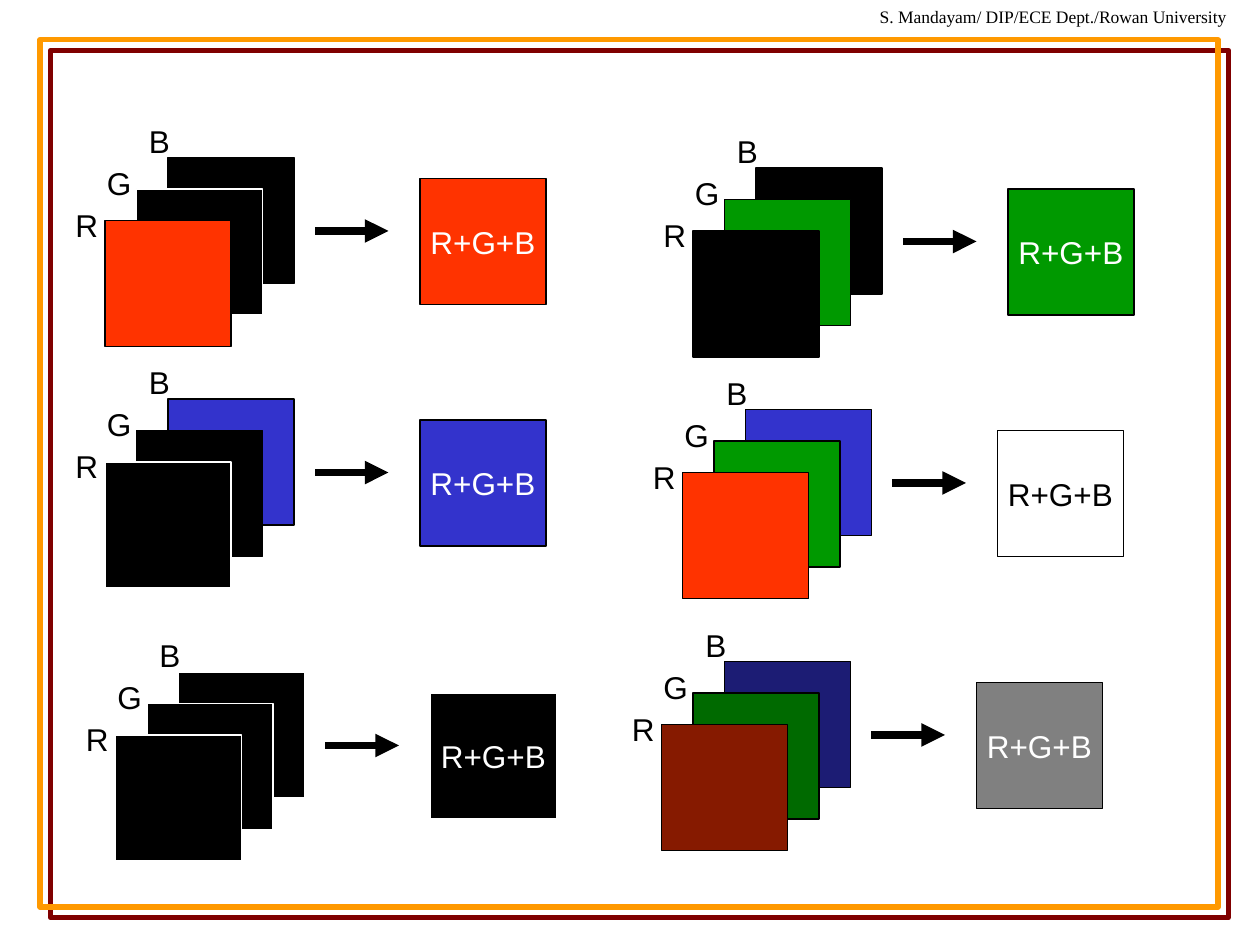
from lxml.etree import SubElement as Sub
from pptx import Presentation
from pptx.dml.color import RGBColor as Rgb
from pptx.enum.shapes import MSO_CONNECTOR as Conn, MSO_SHAPE as Shape
from pptx.enum.text import MSO_ANCHOR as Anchor, MSO_AUTO_SIZE as Auto, PP_ALIGN as Align
from pptx.oxml.ns import qn
from pptx.util import Emu, Pt

PX = 7620
INKS = {
    "black": "000000", "white": "FFFFFF", "gray": "808080",
    "red": "FF3300", "green": "009900", "blue": "3333CC",
    "dark red": "861A00", "dark green": "006A00", "dark blue": "1C1C74",
    "orange": "FF9900", "maroon": "800000",
}


def px(*nums):
    return [Emu(n * PX) for n in nums]


def ink(name):
    return Rgb.from_string(INKS[name])


class Board:
    def __init__(self, slide, font="Arial", size=18):
        self.slide = slide
        self.font = font
        self.size = size
        self.shapes = slide.shapes

    def group(self):
        self.shapes = self.slide.shapes.add_group_shape().shapes

    def letter(self, frame, text, color, font=None, size=None, align=Align.LEFT):
        frame.word_wrap = False
        frame.text = text
        par = frame.paragraphs[0]
        par.alignment = align
        par.font.name = font or self.font
        par.font.size = Pt(size or self.size)
        par.font.color.rgb = ink(color)

    def label(self, x, y, w, h, text, font=None, size=None):
        box = self.shapes.add_textbox(*px(x, y, w, h))
        self.letter(box.text_frame, text, "black", font, size)
        box.text_frame.auto_size = Auto.SHAPE_TO_FIT_TEXT

    def rect(self, x, y, w, h, fill, edge, width=0.75):
        box = self.shapes.add_shape(Shape.RECTANGLE, *px(x, y, w, h))
        box.shadow.inherit = False
        if fill:
            box.fill.solid()
            box.fill.fore_color.rgb = ink(fill)
        else:
            box.fill.background()
        box.line.color.rgb = ink(edge)
        box.line.width = Pt(width)
        return box

    def frame(self, x, y, w, h):
        box = self.rect(x, y, w, h, None, "orange", 3)
        effects = box._element.spPr.find(qn("a:effectLst"))
        shade = Sub(effects, qn("a:outerShdw"), dist=str(Pt(8.5)), dir="2700000",
                    algn="ctr", rotWithShape="0")
        Sub(shade, qn("a:srgbClr"), val=INKS["maroon"])

    def tile(self, x, y, fill, edge, text=None, color="white"):
        box = self.rect(x, y, 120, 120, fill, edge)
        if text:
            self.letter(box.text_frame, text, color, align=Align.CENTER)
            box.text_frame.vertical_anchor = Anchor.MIDDLE

    def arrow(self, x, y, length):
        line = self.shapes.add_connector(Conn.STRAIGHT, *px(x, y, x + length, y))
        line.line.color.rgb = ink("black")
        line.line.width = Pt(4.5)
        Sub(line._element.spPr.find(qn("a:ln")), qn("a:tailEnd"), type="triangle")
        Sub(line._element.spPr, qn("a:effectLst"))

    def mix(self, x, y, fills, edges, total, edge="black", color="white"):
        self.group()
        for i, (fill, rim) in enumerate(zip(fills, edges)):
            self.tile(x + 100 - 30 * i, y + 40 + 30 * i, fill, rim)
        self.tile(x + 340, y + 60, total, edge, "R+G+B", color)
        for text, dx, dy, w in (("R", 0, 80, 46), ("G", 30, 40, 48), ("B", 70, 0, 44)):
            self.label(x + dx, y + dy, w, 48, text)
        self.arrow(x + 240, y + 110, 70)


def main():
    deck = Presentation()
    deck.slide_width, deck.slide_height = px(1200, 900)
    board = Board(deck.slides.add_slide(deck.slide_layouts[6]))
    board.frame(38, 38, 1122, 826)
    board.label(826, 0, 356, 32, "S. Mandayam/ DIP/ECE Dept./Rowan University",
                "Times New Roman", 10)

    dark, light = ["black"] * 3, ["white"] * 3
    board.mix(610, 350, ["blue", "green", "red"], dark, "white", color="black")
    board.mix(70, 600, dark, light, "black", edge="white")
    board.mix(620, 120, ["black", "green", "black"], dark, "green")
    board.mix(60, 110, ["black", "black", "red"], ["black", "white", "black"], "red")
    board.mix(60, 340, ["blue", "black", "black"], ["black", "black", "white"], "blue")
    board.mix(590, 590, ["dark blue", "dark green", "dark red"], dark, "gray")
    deck.save("out.pptx")


if __name__ == "__main__":
    main()
